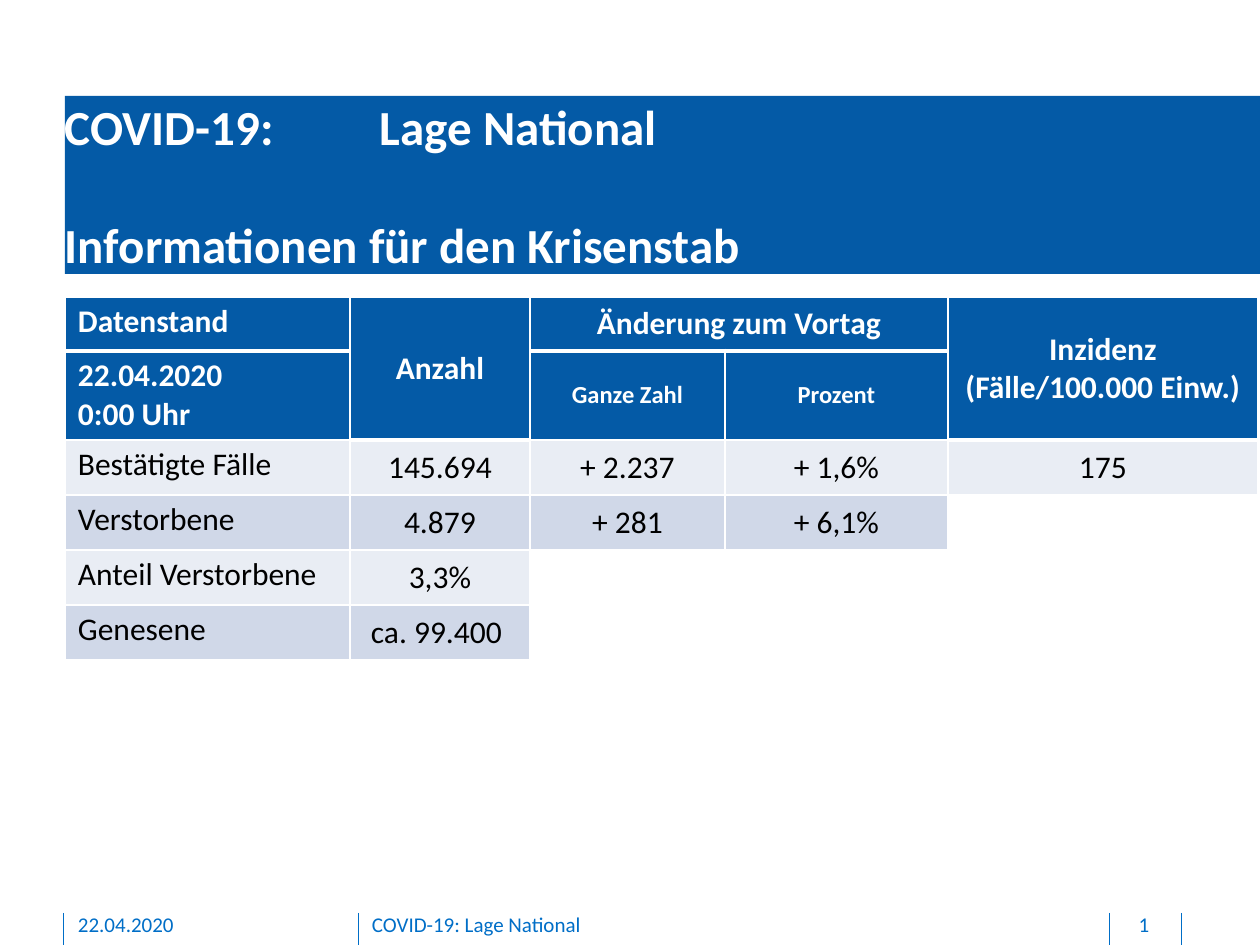
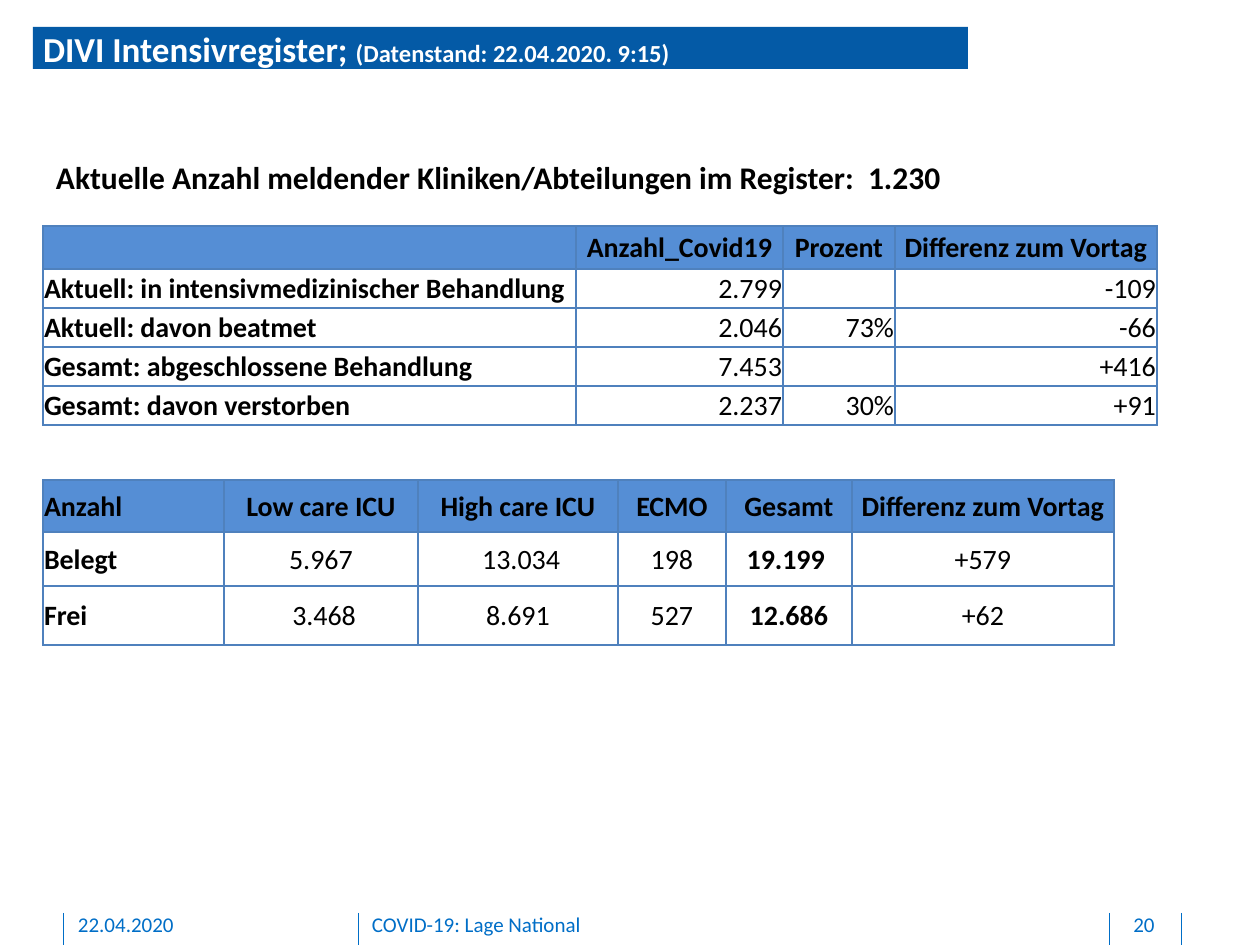
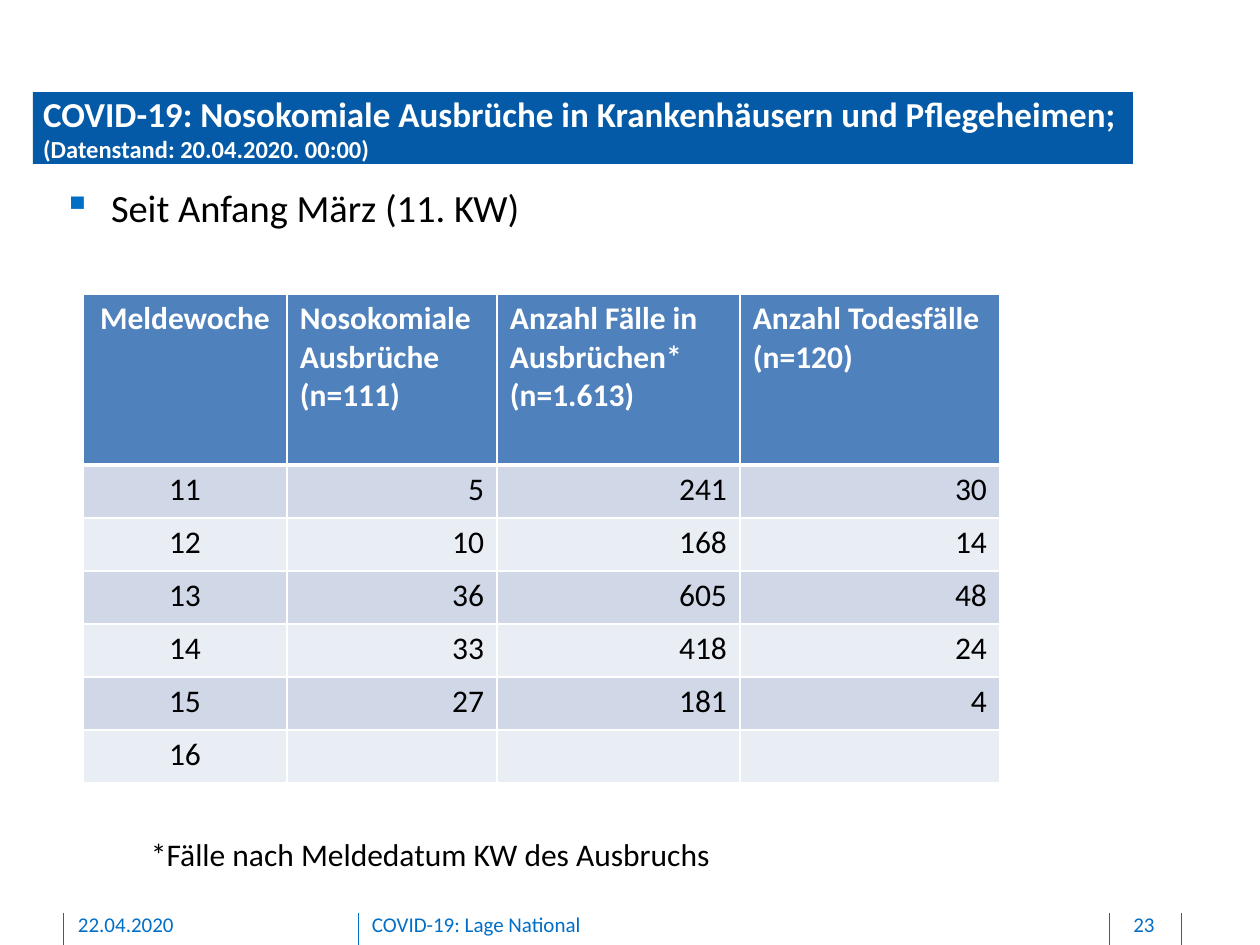
"""Build three slides of a national situation report."""
from lxml import etree
from pptx import Presentation, util as u
from pptx.dml.color import RGBColor
from pptx.enum import shapes, text as t
from pptx.oxml import ns

NAVY = RGBColor(0x04, 0x5A, 0xA6)
BLUE = RGBColor(0x00, 0x6E, 0xC7)
STEEL = RGBColor(0x4F, 0x81, 0xBD)
SKY = RGBColor(0x55, 0x8E, 0xD5)
PALE = RGBColor(0xE9, 0xED, 0xF4)
MIST = RGBColor(0xD0, 0xD8, 0xE8)
WHITE = RGBColor(0xFF, 0xFF, 0xFF)
BLACK = RGBColor(0x00, 0x00, 0x00)
FONT = "Calibri"
SCALE = 914400 / 126
ALIGN = {"l": t.PP_ALIGN.LEFT, "c": t.PP_ALIGN.CENTER, "r": t.PP_ALIGN.RIGHT}
TOP, MID = t.MSO_ANCHOR.TOP, t.MSO_ANCHOR.MIDDLE
INSET = (13, 6, 13, 6)
TIGHT = (1, 1, 1, 0)


def px(n):
    """Turn pixels into EMU."""
    return u.Emu(round(n * SCALE))


def sub(node, tag, **attrs):
    """Add a drawing element with attributes."""
    return etree.SubElement(node, ns.qn("a:" + tag), {k: str(v) for k, v in attrs.items()})


def place(item, box):
    """Move and size a shape."""
    item.left, item.top, item.width, item.height = map(px, box)


def pad(item, inset):
    """Set the inner margins of a frame or cell."""
    (item.margin_left, item.margin_top,
     item.margin_right, item.margin_bottom) = map(px, inset)


def write(frame, words, size=18, color=BLACK, bold=False, align="l",
          tail="", before=0, tab=0, bullet="", hang=0):
    """Fill a frame, one paragraph per line of words."""
    for i, line in enumerate(words.split("\n")):
        par = frame.paragraphs[0] if i == 0 else frame.add_paragraph()
        par.alignment = ALIGN[align]
        par.space_before = u.Pt(before if i else 0)
        prop = par._p.get_or_add_pPr()
        if bullet:
            prop.set("marL", str(px(hang)))
            prop.set("indent", str(-px(hang)))
            sub(sub(prop, "buClr"), "srgbClr", val=BLUE)
            sub(prop, "buChar", char=bullet)
        if tab:
            sub(sub(prop, "tabLst"), "tab", pos=px(tab), algn="l")
        if not line:
            sub(par._p, "endParaRPr", sz=size * 100)
        for part, pt in ((line, size), (tail, 14)):
            if part:
                run = par.add_run()
                run.text = part
                font = run.font
                font.name, font.size, font.bold = FONT, u.Pt(pt), bold
                font.color.rgb = color


def edge(cell, color, top, low):
    """Draw the four borders of a cell."""
    prop = cell._tc.get_or_add_tcPr()
    for side, wide in (("L", 1), ("R", 1), ("T", top), ("B", low)):
        line = sub(prop, "ln" + side, w=u.Pt(wide))
        sub(sub(line, "solidFill"), "srgbClr", val=color)


class Deck:
    """Holds the presentation and the current slide."""

    def __init__(self):
        """Start an empty deck."""
        self.show = Presentation()
        self.show.slide_width, self.show.slide_height = px(1260), px(945)
        self.slide = None

    def page(self, number):
        """Add a slide with its footer."""
        self.slide = self.show.slides.add_slide(self.show.slide_layouts[5])
        for x in (63, 358, 1109, 1181):
            self.rule(x, 913, 945)
        notes = ((78, 256, "22.04.2020", "l"),
                 (372, 714, "COVID-19: Lage National", "l"),
                 (1110, 68, str(number), "c"))
        for x, wide, words, align in notes:
            self.label((x, 912, wide, 27), words, inset=(0, 0, 0, 6),
                       size=12, color=BLUE, align=align)

    def rule(self, x, top, low):
        """Draw a thin upright line."""
        line = self.slide.shapes.add_connector(
            shapes.MSO_CONNECTOR.STRAIGHT, px(x), px(top), px(x), px(low))
        line.line.color.rgb = BLUE
        line.line.width = u.Pt(0.5)
        sub(line._element.spPr, "effectLst")

    def label(self, box, words, inset=INSET, wrap=True, **style):
        """Add a text box."""
        frame = self.slide.shapes.add_textbox(*map(px, box)).text_frame
        frame.word_wrap = wrap
        pad(frame, inset)
        write(frame, words, **style)

    def title(self, box, words, indent=10, **style):
        """Format the title as a solid band."""
        head = self.slide.shapes.title
        place(head, box)
        head.fill.solid()
        head.fill.fore_color.rgb = NAVY
        frame = head.text_frame
        frame.word_wrap = True
        frame.auto_size = t.MSO_AUTO_SIZE.NONE
        frame.vertical_anchor = MID
        pad(frame, (indent, 0, 0, 0))
        write(frame, words, color=WHITE, bold=True, **style)

    def table(self, at, cols, highs, rows, head, body, fill, bands,
              ink=WHITE, line=WHITE, heavy=3, heads=1, size=18, inset=INSET,
              anchors=(TOP, TOP), strong=(), joins=(), sizes=None):
        """Add a table; None marks a blank white cell."""
        box = (*at, sum(cols), sum(highs))
        grid = self.slide.shapes.add_table(len(rows), len(cols), *map(px, box)).table
        grid.horz_banding = False
        for col, wide in zip(grid.columns, cols):
            col.width = px(wide)
        for row, high in zip(grid.rows, highs):
            row.height = px(high)
        for r, c, low, right in joins:
            grid.cell(r, c).merge(grid.cell(low, right))
        for r, row in enumerate(rows):
            first = r < heads
            for c, words in enumerate(row):
                cell = grid.cell(r, c)
                edge(cell, line, heavy if r == 1 else 1, heavy if r == 0 else 1)
                cell.fill.solid()
                shade = fill if first else bands[(r - heads) % 2]
                cell.fill.fore_color.rgb = WHITE if words is None else shade
                if cell.is_spanned:
                    continue
                pad(cell, inset)
                cell.vertical_anchor = anchors[c > 0]
                write(cell.text_frame, words or "",
                      size=(sizes or {}).get((r, c), size),
                      color=ink if first else BLACK,
                      bold=first or c in strong,
                      align=(head if first else body)[c])


def cases(deck):
    """Build the slide on the national figures."""
    deck.page(1)
    deck.title((65, 96, 1195, 178),
               "COVID-19:\tLage National\nInformationen für den Krisenstab",
               indent=0, size=28, before=34, tab=315)
    rows = [
        ["Datenstand", "Anzahl", "Änderung zum Vortag", "", "Inzidenz (Fälle/100.000 Einw.)"],
        ["22.04.2020\n0:00 Uhr", "", "Ganze Zahl", "Prozent", ""],
        ["Bestätigte Fälle", "145.694", "+ 2.237", "+ 1,6%", "175"],
        ["Verstorbene", "4.879", "+ 281", "+ 6,1%", None],
        ["Anteil Verstorbene", "3,3%", None, None, None],
        ["Genesene", "ca. 99.400 ", None, None, None],
    ]
    deck.table((65, 297), (285, 180, 195, 223, 310), (54, 89, 55, 55, 55, 55), rows,
               "lcccc", "lcccc", NAVY, (PALE, MIST), heads=2, anchors=(TOP, MID),
               joins=((0, 1, 1, 1), (0, 2, 0, 3), (0, 4, 1, 4)),
               sizes={(1, 2): 14, (1, 3): 14})


def beds(deck):
    """Build the slide on intensive care."""
    deck.page(20)
    deck.title((33, 27, 935, 42), "DIVI Intensivregister; ", size=20,
               tail="(Datenstand: 22.04.2020. 9:15)")
    deck.label((43, 152, 935, 50),
               "Aktuelle Anzahl meldender Kliniken/Abteilungen im Register:  1.230", bold=True)
    look = dict(fill=SKY, bands=(WHITE, WHITE), ink=BLACK, line=STEEL, heavy=1,
                size=16, inset=TIGHT, anchors=(MID, MID))
    care = [
        ["", "Anzahl_Covid19", "Prozent", "Differenz zum Vortag"],
        ["Aktuell: in intensivmedizinischer Behandlung", "2.799", "", "-109"],
        ["Aktuell: davon beatmet", "2.046", "73%", "-66"],
        ["Gesamt: abgeschlossene Behandlung", "7.453", "", "+416"],
        ["Gesamt: davon verstorben", "2.237", "30%", "+91"],
    ]
    deck.table((43, 226), (533, 207, 112, 262), (43, 39, 39, 39, 39), care,
               "lccc", "lrrr", strong=(0,), **look)
    free = [
        ["Anzahl", "Low care ICU", "High care ICU", "ECMO", "Gesamt", "Differenz zum Vortag"],
        ["Belegt", "5.967", " 13.034", "198", "19.199 ", "+579"],
        ["Frei", " 3.468", "8.691", "527", " 12.686 ", "+62"],
    ]
    deck.table((43, 480), (181, 194, 200, 108, 126, 262), (52, 54, 59), free,
               "lccccc", "lccccc", strong=(0, 4), **look)


def spread(deck):
    """Build the slide on outbreaks."""
    deck.page(23)
    deck.title((33, 92, 1100, 72),
               "COVID-19: Nosokomiale Ausbrüche in Krankenhäusern und Pflegeheimen; ",
               size=20, tail="(Datenstand: 20.04.2020. 00:00)")
    deck.label((63, 184, 1115, 60), "Seit Anfang März (11. KW)",
               inset=(0, 0, 0, 0), size=22, bullet="▪", hang=48)
    rows = [
        ["Meldewoche", "Nosokomiale Ausbrüche (n=111)",
         "Anzahl Fälle in Ausbrüchen* (n=1.613)", "Anzahl Todesfälle (n=120)"],
        ["11", "5", "241", "30"],
        ["12", "10", "168", "14"],
        ["13", "36", "605", "48"],
        ["14", "33", "418", "24"],
        ["15", "27", "181", "4"],
        ["16", "", "", ""],
    ]
    deck.table((83, 294), (204, 210, 243, 260), (171, *[53] * 6), rows,
               "clll", "crrr", STEEL, (MIST, PALE))
    deck.label((138, 829, 591, 50), "*Fälle nach Meldedatum KW des Ausbruchs", wrap=False)


def main():
    """Build and save the deck."""
    deck = Deck()
    for build in (cases, beds, spread):
        build(deck)
    deck.show.save("out.pptx")


if __name__ == "__main__":
    main()
